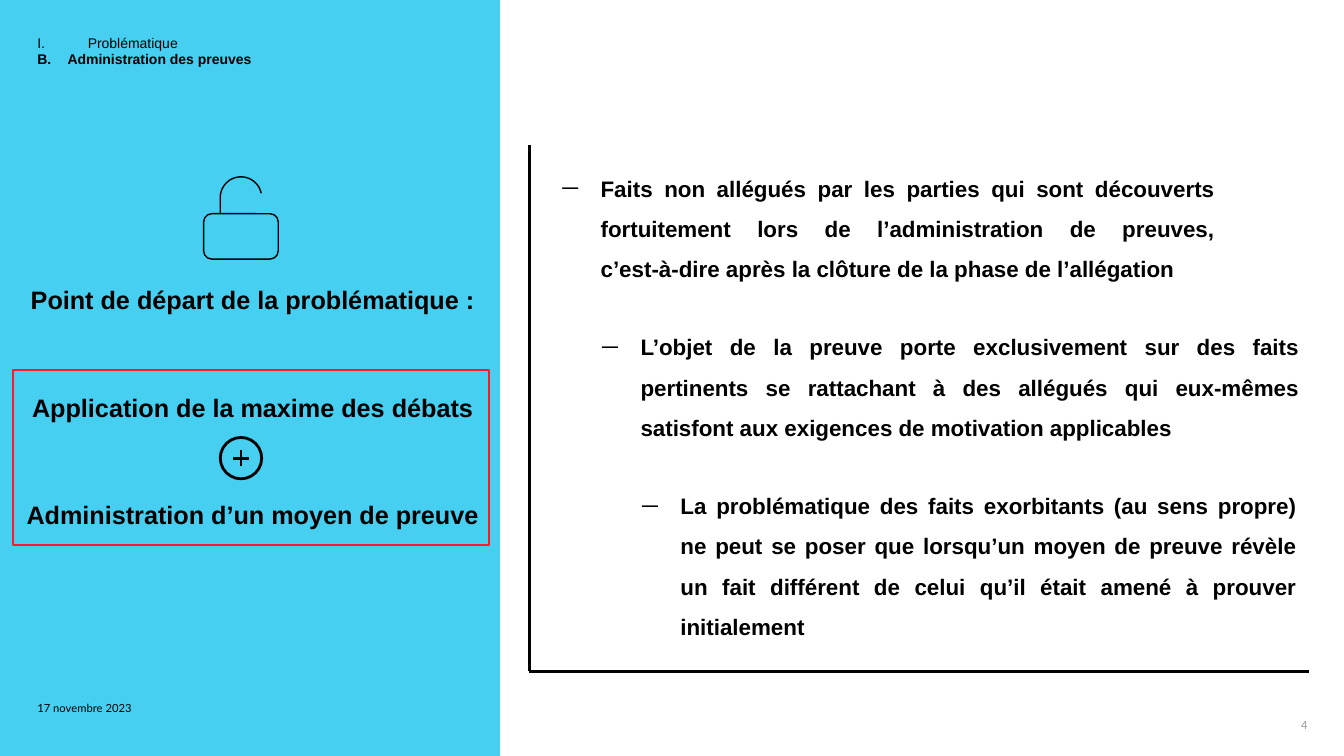
import math
from dataclasses import dataclass

import pptx
import pptx.dml.color
import pptx.enum.shapes
import pptx.enum.text
import pptx.util
from lxml import etree
from pptx.oxml.ns import qn

Pt = pptx.util.Pt
Kind = pptx.enum.shapes.MSO_SHAPE
Align = pptx.enum.text.PP_ALIGN
Anchor = pptx.enum.text.MSO_ANCHOR

WIDE = pptx.util.Inches(13.33)
HIGH = pptx.util.Inches(7.5)
HANG = pptx.util.Inches(0.38)
HUES = {"sky": "46CFF0", "ink": "000000", "red": "FF172F", "grey": "969696"}


@dataclass(frozen=True)
class Box:
    """Place and size in percent of the slide's width and height."""
    x: float
    y: float
    w: float
    h: float

    def emu(self):
        return across(self.x), down(self.y), across(self.w), down(self.h)


@dataclass(frozen=True)
class Style:
    size: float
    bold: bool = False
    face: str = "Arial"
    hue: str = "ink"
    align: Align = Align.LEFT
    lead: float = 1.0


@dataclass(frozen=True)
class Label:
    text: str
    box: Box
    style: Style
    anchor: Anchor = Anchor.MIDDLE


@dataclass(frozen=True)
class Point:
    text: str
    width: float
    height: float


@dataclass(frozen=True)
class Line:
    x1: float
    y1: float
    x2: float
    y2: float
    weight: float


HEAD = Style(18, bold=True, align=Align.CENTER)
ITEM = Style(16, bold=True, align=Align.JUSTIFY, lead=1.5)

LABELS = [
    Label("I.\tProblématique", Box(2.78, 3.2, 76.8, 3.6),
          Style(10, lead=1.22), Anchor.BOTTOM),
    Label("17 novembre 2023", Box(2.78, 92.67, 23.63, 2), Style(8, face="Lato")),
    Label("4", Box(93.7, 94.13, 3.6, 2.67),
          Style(8, face="Lato", hue="grey", align=Align.RIGHT), Anchor.BOTTOM),
]
HEADS = [
    "Point de départ de la problématique :",
    "Application de la maxime des débats",
    "Administration d’un moyen de preuve",
]
POINTS = [
    Point("Faits non allégués par les parties qui sont découverts fortuitement "
          "lors de l’administration de preuves,\vc’est-à-dire après la clôture "
          "de la phase de l’allégation", 50.03, 16.93),
    Point("L’objet de la preuve porte exclusivement sur des faits pertinents se "
          "rattachant à des allégués qui eux-mêmes satisfont aux exigences de "
          "motivation applicables", 53.33, 16.93),
    Point("La problématique des faits exorbitants (au sens propre) ne peut se "
          "poser que lorsqu’un moyen de preuve révèle un fait différent de celui "
          "qu’il était amené à prouver initialement", 50.18, 22.4),
]
LINES = [
    Line(39.38, 19.2, 39.38, 88.8, 2.25),
    Line(39.38, 88.8, 97.43, 88.8, 2.25),
    Line(17.93, 59.53, 17.93, 61.67, 2),
    Line(17.33, 60.6, 18.53, 60.6, 2),
]


def across(share: float) -> int:
    return round(WIDE * share / 100)


def down(share: float) -> int:
    return round(HIGH * share / 100)


def tint(name: str) -> pptx.dml.color.RGBColor:
    return pptx.dml.color.RGBColor.from_string(HUES[name])


def finish(shape, fill: str = "", line: str = "", weight: float = 1) -> None:
    """Set fill and outline; an empty name means none."""
    shape.shadow.inherit = False
    if fill:
        shape.fill.solid()
        shape.fill.fore_color.rgb = tint(fill)
    else:
        shape.fill.background()
    if line:
        shape.line.color.rgb = tint(line)
        shape.line.width = Pt(weight)
    else:
        shape.line.fill.background()


def add_shape(slide, kind: Kind, box: Box, fill: str = "", line: str = "",
              weight: float = 1):
    shape = slide.shapes.add_shape(kind, *box.emu())
    finish(shape, fill, line, weight)
    return shape


def add_line(slide, line: Line) -> None:
    rule = slide.shapes.add_connector(
        pptx.enum.shapes.MSO_CONNECTOR.STRAIGHT,
        across(line.x1), down(line.y1), across(line.x2), down(line.y2))
    rule.line.color.rgb = tint("ink")
    rule.line.width = Pt(line.weight)
    etree.SubElement(rule._element.spPr, qn("a:effectLst"))


def write(frame, text: str, style: Style, hang: int = 0, mark: str = ""):
    """Fill the frame with one paragraph, hanging and bulleted on demand."""
    frame.word_wrap = True
    frame.auto_size = pptx.enum.text.MSO_AUTO_SIZE.NONE
    para = frame.paragraphs[0]
    para.text = text
    para.alignment = style.align
    para.line_spacing = style.lead
    props = para._p.get_or_add_pPr()
    if hang:
        props.set("marL", str(hang))
        props.set("indent", str(-hang))
    if mark:
        para.space_before = Pt(4)
        etree.SubElement(props, qn("a:buFont"), typeface="Arial")
        etree.SubElement(props, qn("a:buChar"), char=mark)
    font = para.font
    font.name, font.size, font.bold = style.face, Pt(style.size), style.bold
    font.color.rgb = tint(style.hue)


def trim(frame, anchor: Anchor) -> None:
    frame.margin_left = frame.margin_right = 0
    frame.margin_top = frame.margin_bottom = 0
    frame.vertical_anchor = anchor


def add_label(slide, label: Label) -> None:
    frame = slide.shapes.add_textbox(*label.box.emu()).text_frame
    trim(frame, label.anchor)
    write(frame, label.text, label.style)


def add_title(slide) -> None:
    title = slide.shapes.title
    title.left, title.top, title.width, title.height = Box(2.78, 6.93, 76.8, 6.8).emu()
    trim(title.text_frame, Anchor.TOP)
    write(title.text_frame, "B.\tAdministration des preuves",
          Style(10, bold=True, lead=0.9), hang=pptx.util.Inches(0.3))


def add_lock(slide) -> None:
    body = add_shape(slide, Kind.ROUNDED_RECTANGLE, Box(15.15, 28.27, 5.55, 6),
                     line="ink")
    body.adjustments[0] = 0.18
    mid, top, radius = across(17.93), down(26.13), across(1.54)
    bow = [(mid + round(radius * math.cos(math.radians(a))),
            top - round(radius * math.sin(math.radians(a))))
           for a in range(180, 8, -4)]
    pen = slide.shapes.build_freeform(mid - radius, down(28.27))
    pen.add_line_segments(bow, close=False)
    finish(pen.convert_to_shape(), line="ink")


def main() -> None:
    deck = pptx.Presentation()
    deck.slide_width, deck.slide_height = WIDE, HIGH
    slide = deck.slides.add_slide(deck.slide_layouts[5])
    panel = add_shape(slide, Kind.RECTANGLE, Box(0, 0, 37.2, 100), fill="sky")
    slide.shapes._spTree.insert(2, panel._element)
    add_title(slide)
    add_shape(slide, Kind.RECTANGLE, Box(0.98, 48.93, 35.4, 23.2), line="red", weight=1.5)
    add_shape(slide, Kind.OVAL, Box(16.39, 57.87, 3.08, 5.47), line="ink", weight=2)
    add_lock(slide)
    for line in LINES:
        add_line(slide, line)
    for label in LABELS:
        add_label(slide, label)
    for i, text in enumerate(HEADS):
        add_label(slide, Label(text, Box(0.2, 36.6 + 14.23 * i, 37.2, 6), HEAD))
    for i, item in enumerate(POINTS):
        box = Box(41.1 + 2.97 * i, 20.67 + 21 * i, item.width, item.height)
        frame = slide.shapes.add_textbox(*box.emu()).text_frame
        write(frame, item.text, ITEM, hang=HANG, mark="─")
    deck.save("out.pptx")


if __name__ == "__main__":
    main()
